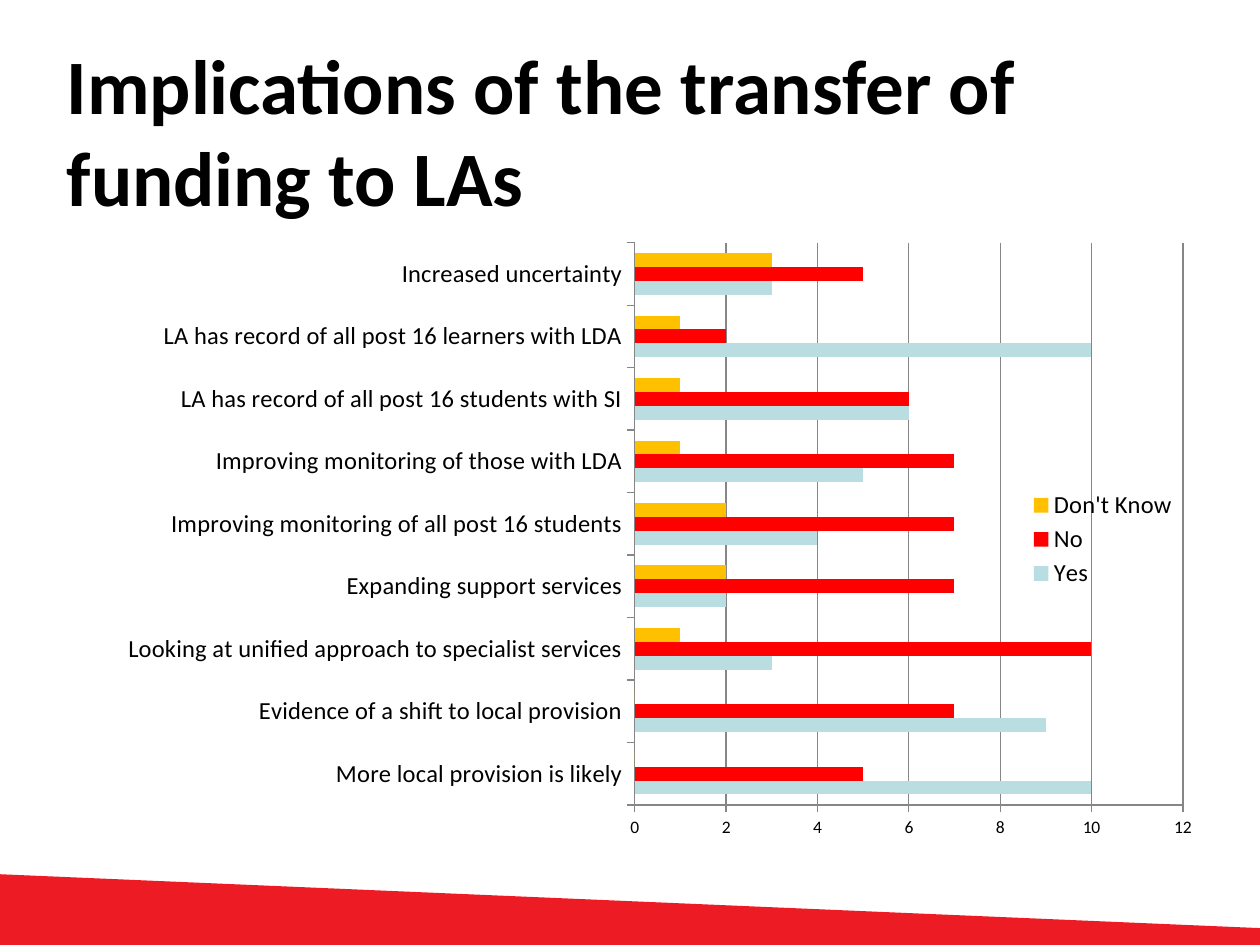
"""Build a slide charting the implications of the transfer of funding to LAs."""
import lxml.etree
import pptx
import pptx.chart.data
import pptx.dml.color
import pptx.enum.chart
import pptx.enum.text
import pptx.oxml.ns
import pptx.util

Pt = pptx.util.Pt
RGB = pptx.dml.color.RGBColor
BLACK = RGB(0x00, 0x00, 0x00)
GREY = RGB(0x86, 0x86, 0x86)
BAND_RED = RGB(0xED, 0x1B, 0x24)
PALE_BLUE = RGB(0xBA, 0xDD, 0xE1)
RED = RGB(0xFF, 0x00, 0x00)
AMBER = RGB(0xFF, 0xC0, 0x00)
FONT = "Calibri"

TITLE = "Implications of the transfer of funding to LAs"
IMPLICATIONS = [
    ("More local provision is likely", 10, 5, 0),
    ("Evidence of a shift to local provision", 9, 7, 0),
    ("Looking at unified approach to specialist services", 3, 10, 1),
    ("Expanding support services", 2, 7, 2),
    ("Improving monitoring of all post 16 students", 4, 7, 2),
    ("Improving monitoring of those with LDA", 5, 7, 1),
    ("LA has record of all post 16 students with SI", 6, 6, 1),
    ("LA has record of all post 16 learners with LDA", 10, 2, 1),
    ("Increased uncertainty", 3, 5, 3),
]
ANSWERS = [("Yes", PALE_BLUE), ("No", RED), ("Don't Know", AMBER)]
BAND = [(-1.5, 499.5), (-1.5, 541), (723, 542), (723, 530.5)]
PLOT_AREA = (0.5, 0.03, 0.48, 0.9)
LEGEND_AREA = (0.84, 0.42, 0.14, 0.17)


def style_font(font, size, bold=False):
    font.name = FONT
    font.size = Pt(size)
    font.bold = bold
    font.color.rgb = BLACK


def place(element, area, index, inner=False):
    qn = pptx.oxml.ns.qn
    for unset in element.findall(qn("c:layout")):
        element.remove(unset)
    layout = lxml.etree.Element(qn("c:layout"))
    manual = lxml.etree.SubElement(layout, qn("c:manualLayout"))
    settings = [("layoutTarget", "inner")] if inner else []
    settings += [("xMode", "edge"), ("yMode", "edge")]
    settings += zip("xywh", area)
    for tag, value in settings:
        lxml.etree.SubElement(manual, qn("c:" + tag)).set("val", str(value))
    element.insert(index, layout)


def add_band(slide):
    builder = slide.shapes.build_freeform(Pt(BAND[0][0]), Pt(BAND[0][1]))
    builder.add_line_segments([(Pt(x), Pt(y)) for x, y in BAND[1:]], close=True)
    band = builder.convert_to_shape()
    band.shadow.inherit = False
    band.fill.solid()
    band.fill.fore_color.rgb = BAND_RED
    band.line.fill.background()


def add_implications(slide):
    labels, *answer_counts = zip(*IMPLICATIONS)
    survey = pptx.chart.data.CategoryChartData()
    survey.categories = labels
    for (answer, _), counts in zip(ANSWERS, answer_counts):
        survey.add_series(answer, counts)
    chart = slide.shapes.add_chart(
        pptx.enum.chart.XL_CHART_TYPE.BAR_CLUSTERED,
        Pt(36.5), Pt(128), Pt(652.5), Pt(357), survey).chart
    chart.has_title = False
    style_font(chart.font, 14)

    bars = chart.plots[0]
    bars.vary_by_categories = False
    bars.gap_width = 150
    for series, (_, color) in zip(bars.series, ANSWERS):
        series.format.fill.solid()
        series.format.fill.fore_color.rgb = color

    counts_axis = chart.value_axis
    counts_axis.minimum_scale, counts_axis.maximum_scale = 0, 12
    counts_axis.major_unit = 2
    counts_axis.has_major_gridlines = True
    for line in (counts_axis.format.line, chart.category_axis.format.line,
                 counts_axis.major_gridlines.format.line):
        line.color.rgb = GREY
        line.width = Pt(0.75)
    for axis, size in ((chart.category_axis, 14), (counts_axis, 10)):
        axis.major_tick_mark = pptx.enum.chart.XL_TICK_MARK.OUTSIDE
        style_font(axis.tick_labels.font, size)

    chart.has_legend = True
    chart.legend.position = pptx.enum.chart.XL_LEGEND_POSITION.RIGHT
    chart.legend.include_in_layout = True
    style_font(chart.legend.font, 14)
    plot_area = chart._chartSpace.chart.plotArea
    legend = plot_area.getparent().find(pptx.oxml.ns.qn("c:legend"))
    place(plot_area, PLOT_AREA, 0, inner=True)
    has_position = legend.find(pptx.oxml.ns.qn("c:legendPos")) is not None
    place(legend, LEGEND_AREA, int(has_position))


def add_title(slide):
    frame = slide.shapes.add_textbox(Pt(31), Pt(37.5), Pt(641), Pt(73.5)).text_frame
    frame.word_wrap = True
    frame.vertical_anchor = pptx.enum.text.MSO_ANCHOR.MIDDLE
    frame.text = TITLE
    style_font(frame.paragraphs[0].font, 44, bold=True)


def main():
    deck = pptx.Presentation()
    deck.slide_width, deck.slide_height = Pt(720), Pt(540)
    slide = deck.slides.add_slide(deck.slide_layouts[6])
    add_band(slide)
    add_implications(slide)
    add_title(slide)
    deck.save("out.pptx")


if __name__ == "__main__":
    main()
